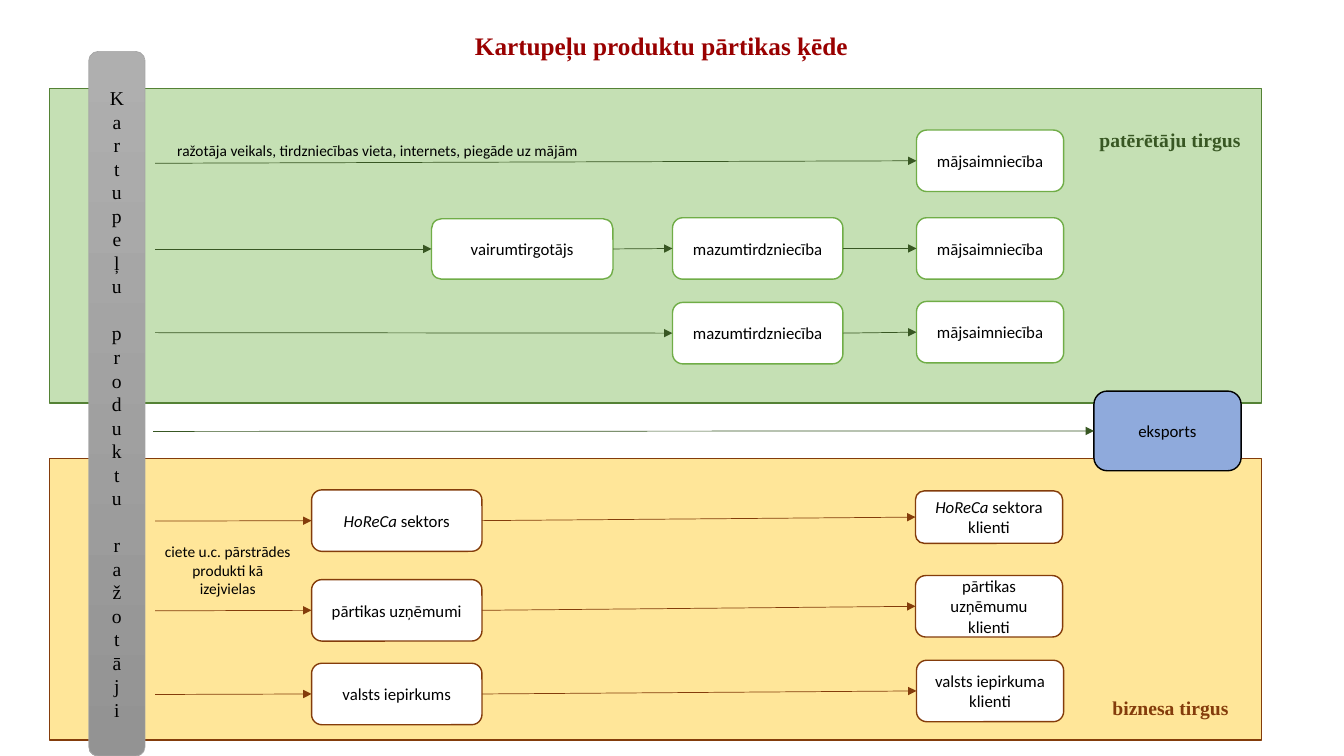
from lxml import etree
from pptx import Presentation
from pptx.dml.color import RGBColor
from pptx.enum.shapes import MSO_CONNECTOR, MSO_SHAPE
from pptx.enum.text import MSO_ANCHOR, PP_ALIGN
from pptx.oxml.ns import qn
from pptx.util import Emu, Pt

PX = 9144  # 100 px to the inch
RECT, ROUNDED = MSO_SHAPE.RECTANGLE, MSO_SHAPE.ROUNDED_RECTANGLE
STRAIGHT = MSO_CONNECTOR.STRAIGHT
TOP, MIDDLE = MSO_ANCHOR.TOP, MSO_ANCHOR.MIDDLE
LEFT, CENTER = PP_ALIGN.LEFT, PP_ALIGN.CENTER
LEFT_SIDE, RIGHT_SIDE = 1, 3
SANS, SERIF = "Calibri", "Times New Roman"

BLACK = RGBColor(0x00, 0x00, 0x00)
WHITE = RGBColor(0xFF, 0xFF, 0xFF)
TITLE_RED = RGBColor(0x99, 0x00, 0x00)
PALE_GREEN = RGBColor(0xC5, 0xE0, 0xB4)
MID_GREEN = RGBColor(0x54, 0x82, 0x35)
BOX_GREEN = RGBColor(0x70, 0xAD, 0x47)
DARK_GREEN = RGBColor(0x38, 0x57, 0x23)
PALE_YELLOW = RGBColor(0xFF, 0xE6, 0x99)
BROWN = RGBColor(0x84, 0x3C, 0x0B)
BLUE = RGBColor(0x8F, 0xAA, 0xDC)
GREY = RGBColor(0xA5, 0xA5, 0xA5)
GREY_TOP = RGBColor(0xAF, 0xAF, 0xAF)
GREY_BOTTOM = RGBColor(0x93, 0x93, 0x93)

ITALIC_TERM = "HoReCa"
ARROW_START = 154


def px(*lengths):
    return [Emu(length * PX) for length in lengths]


def write(shape, text, size, font=SANS, color=BLACK, bold=False,
          align=CENTER, anchor=MIDDLE):
    frame = shape.text_frame
    frame.word_wrap = True
    frame.vertical_anchor = anchor
    paragraph = frame.paragraphs[0]
    paragraph.alignment = align
    paragraph.font.size = Pt(size)
    paragraph.font.name = font
    paragraph.font.bold = bold
    paragraph.font.color.rgb = color
    if text.startswith(ITALIC_TERM):
        term = paragraph.add_run()
        term.text = ITALIC_TERM
        term.font.italic = True
        text = text.removeprefix(ITALIC_TERM)
    paragraph.add_run().text = text
    return paragraph


def add_label(slide, area, text, size, **style):
    return write(slide.shapes.add_textbox(*px(*area)), text, size, **style)


def add_block(slide, kind, area, fill, line, line_width=1):
    shape = slide.shapes.add_shape(kind, *px(*area))
    shape.shadow.inherit = False
    if fill is not None:
        shape.fill.solid()
        shape.fill.fore_color.rgb = fill
    shape.line.color.rgb = line
    shape.line.width = Pt(line_width)
    return shape


def add_box(slide, area, text, line, fill=WHITE):
    shape = add_block(slide, ROUNDED, area, fill, line)
    write(shape, text, 12)
    return shape


def add_arrow(slide, color, target, source=None, start=None):
    """Arrow to the target's left side, from a source box or a start point."""
    x, y = start or (0, 0)
    connector = slide.shapes.add_connector(STRAIGHT, *px(x, y, x, y))
    if source is not None:
        connector.begin_connect(source, RIGHT_SIDE)
    connector.end_connect(target, LEFT_SIDE)
    connector.line.color.rgb = color
    connector.line.width = Pt(0.5)
    etree.SubElement(connector.line._get_or_add_ln(), qn("a:tailEnd"), type="triangle")
    etree.SubElement(connector._element.spPr, qn("a:effectLst"))


def add_chain(slide, color, start_y, boxes):
    """Arrow from the producers to the first box, then from box to box."""
    add_arrow(slide, color, boxes[0], start=(ARROW_START, start_y))
    for source, target in zip(boxes, boxes[1:]):
        add_arrow(slide, color, target, source=source)


def add_producer_bar(slide):
    bar = add_block(slide, ROUNDED, (88, 51, 56, 699), None, GREY, 0.5)
    bar.fill.gradient()
    bar.fill.gradient_angle = 270
    for stop, color in zip(bar.fill.gradient_stops, (GREY_TOP, GREY_BOTTOM)):
        stop.color.rgb = color
    write(bar, "Kartupeļu produktu ražotāji", 14, font=SERIF)
    bar.text_frame._txBody.bodyPr.set("vert", "wordArtVert")


def add_consumer_market(slide):
    add_block(slide, RECT, (49, 88, 1202, 312), PALE_GREEN, MID_GREEN)
    add_label(slide, (1076, 122, 169, 34), "patērētāju tirgus", 14,
              font=SERIF, color=DARK_GREEN, bold=True, anchor=TOP)
    households = [add_box(slide, (909, y, 146, 61), "mājsaimniecība", BOX_GREEN)
                  for y in (129, 216, 299)]
    retailers = [add_box(slide, (667, y, 169, 61), "mazumtirdzniecība", BOX_GREEN)
                 for y in (216, 300)]
    wholesaler = add_box(slide, (428, 217, 180, 60), "vairumtirgotājs", BOX_GREEN)
    add_chain(slide, DARK_GREEN, 162, [households[0]])
    add_chain(slide, DARK_GREEN, 247, [wholesaler, retailers[0], households[1]])
    add_chain(slide, DARK_GREEN, 330, [retailers[1], households[2]])
    add_label(slide, (166, 135, 533, 29),
              "ražotāja veikals, tirdzniecības vieta, internets, piegāde uz mājām",
              11, align=LEFT, anchor=TOP)


def add_business_market(slide):
    add_block(slide, RECT, (49, 455, 1202, 279), PALE_YELLOW, BROWN)
    add_label(slide, (1085, 686, 152, 34), "biznesa tirgus", 14,
              font=SERIF, color=BROWN, bold=True, anchor=TOP)
    rows = [
        (486, "HoReCa sektors", (908, 487, 146, 52), "HoReCa sektora klienti"),
        (575, "pārtikas uzņēmumi", (908, 571, 146, 61), "pārtikas uzņēmumu klienti"),
        (658, "valsts iepirkums", (909, 655, 146, 61), "valsts iepirkuma klienti"),
    ]
    for y, buyer_text, client_area, client_text in rows:
        buyer = add_box(slide, (309, y, 169, 61), buyer_text, BROWN)
        client = add_box(slide, client_area, client_text, BROWN)
        add_chain(slide, BROWN, y + 31, [buyer, client])
    add_label(slide, (153, 533, 146, 66),
              "ciete u.c. pārstrādes produkti kā izejvielas", 11, anchor=TOP)


def main():
    presentation = Presentation()
    presentation.slide_width, presentation.slide_height = px(1333, 750)
    slide = presentation.slides.add_slide(presentation.slide_layouts[6])

    # Title
    title = add_label(slide, (81, 25, 1150, 43), "Kartupeļu produktu pārtikas ķēde",
                      18, font=SERIF, color=TITLE_RED, bold=True)
    title.line_spacing = 0.9

    # Markets
    add_business_market(slide)
    add_consumer_market(slide)

    # Export, between the two markets
    export = add_box(slide, (1085, 388, 146, 79), "eksports", BLACK, BLUE)
    add_arrow(slide, DARK_GREEN, export, start=(152, 428))

    # Producers
    add_producer_bar(slide)
    presentation.save("out.pptx")


if __name__ == "__main__":
    main()
